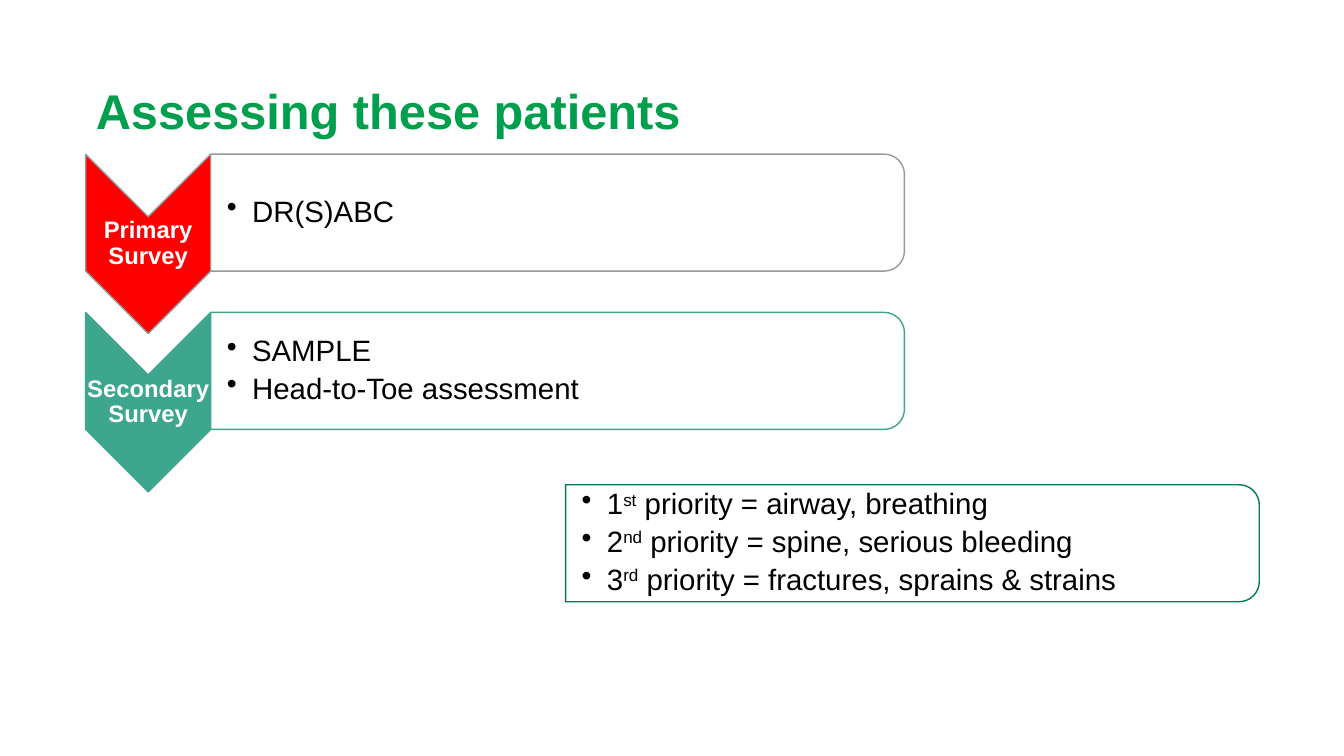
from dataclasses import dataclass
from math import cos, pi, sin

from lxml.etree import SubElement
from pptx import Presentation
from pptx.dml.color import RGBColor
from pptx.enum.text import MSO_ANCHOR as Anchor, MSO_AUTO_SIZE as AutoSize, PP_ALIGN as Align
from pptx.oxml.ns import qn
from pptx.shapes.autoshape import Shape
from pptx.slide import Slide
from pptx.text.text import TextFrame, _Paragraph as Paragraph
from pptx.util import Inches, Pt


@dataclass(frozen=True)
class Theme:
    font: str = "Arial"
    title_size: float = 34.8
    stage_size: float = 17
    item_size: float = 21
    title: str = "009F4D"
    ink: str = "000000"
    white: str = "FFFFFF"
    primary: str = "FF0000"
    primary_line: str = "97999B"
    secondary: str = "3EA68E"
    priority_line: str = "007A53"


@dataclass(frozen=True)
class Panel:
    left: float
    top: float
    line: str
    items: tuple[str, ...]


@dataclass(frozen=True)
class Stage:
    label: str
    fill: str
    line: str
    items: tuple[str, ...]


THEME = Theme()
STAGES = (
    Stage("Primary Survey", THEME.primary, THEME.primary_line, ("DR(S)ABC",)),
    Stage("Secondary Survey", THEME.secondary, THEME.secondary,
          ("SAMPLE", "Head-to-Toe assessment")),
)
# A caret pair encloses superscript text.
PRIORITIES = Panel(5.61, 4.81, THEME.priority_line, (
    "1^st^ priority = airway, breathing",
    "2^nd^ priority = spine, serious bleeding",
    "3^rd^ priority = fractures, sprains & strains",
))
STAGE_LEFT, STAGE_TOP, STAGE_PITCH = 0.85, 1.53, 1.57
CHEVRON_WIDTH, CHEVRON_HEIGHT = 1.24, 1.78
PANEL_WIDTH, PANEL_HEIGHT, CORNER = 6.88, 1.16, 0.2
ARC_STEPS = 8


def add_outline(slide: Slide, points: list[tuple[float, float]], fill: str, line: str) -> Shape:
    start, *rest = [(Inches(x), Inches(y)) for x, y in points]
    builder = slide.shapes.build_freeform(*start)
    builder.add_line_segments(rest, close=True)
    outline = builder.convert_to_shape()
    outline.shadow.inherit = False
    outline.fill.solid()
    outline.fill.fore_color.rgb = RGBColor.from_string(fill)
    outline.line.color.rgb = RGBColor.from_string(line)
    outline.line.width = Pt(1)
    return outline


def set_frame(frame: TextFrame, anchor: Anchor, left: float, top: float,
              right: float, bottom: float) -> None:
    frame.word_wrap = True
    frame.auto_size = AutoSize.NONE
    frame.vertical_anchor = anchor
    frame.margin_left, frame.margin_top = Inches(left), Inches(top)
    frame.margin_right, frame.margin_bottom = Inches(right), Inches(bottom)


def style(paragraph: Paragraph, size: float, color: str, bold: bool, align: Align) -> None:
    paragraph.alignment = align
    paragraph.line_spacing = 0.9
    paragraph.font.name = THEME.font
    paragraph.font.size = Pt(size)
    paragraph.font.bold = bold
    paragraph.font.color.rgb = RGBColor.from_string(color)


def add_bullet(paragraph: Paragraph) -> None:
    properties = paragraph._p.get_or_add_pPr()
    properties.set("marL", str(Inches(0.25)))
    properties.set("indent", str(-Inches(0.25)))
    SubElement(properties, qn("a:buChar")).set("char", "•")


def add_title(slide: Slide, text: str) -> None:
    title = slide.shapes.title
    title.left, title.top = Inches(0.85), Inches(0.82)
    title.width, title.height = Inches(8.3), Inches(1.36)
    set_frame(title.text_frame, Anchor.TOP, 0.1, 0.05, 0.1, 0.05)
    title.text_frame.text = text
    style(title.text_frame.paragraphs[0], THEME.title_size, THEME.title, True, Align.LEFT)


def add_chevron(slide: Slide, stage: Stage, top: float) -> None:
    point = CHEVRON_WIDTH / 2
    left, middle, right = STAGE_LEFT, STAGE_LEFT + point, STAGE_LEFT + CHEVRON_WIDTH
    bottom = top + CHEVRON_HEIGHT
    chevron = add_outline(slide, [
        (right, top), (right, bottom - point), (middle, bottom),
        (left, bottom - point), (left, top), (middle, top + point),
    ], stage.fill, stage.line)
    set_frame(chevron.text_frame, Anchor.MIDDLE, 0.01, 0.63, 0.01, 0.63)
    chevron.text_frame.text = stage.label
    style(chevron.text_frame.paragraphs[0], THEME.stage_size, THEME.white, True, Align.CENTER)


def add_panel(slide: Slide, panel: Panel) -> None:
    """Draw a bulleted box whose right-hand corners are rounded."""
    right, bottom = panel.left + PANEL_WIDTH, panel.top + PANEL_HEIGHT
    angles = [step * pi / 2 / ARC_STEPS for step in range(ARC_STEPS + 1)]
    arc = [(right - CORNER + CORNER * sin(a), CORNER - CORNER * cos(a)) for a in angles]
    upper = [(x, panel.top + inset) for x, inset in arc]
    lower = [(x, bottom - inset) for x, inset in reversed(arc)]
    corners = [(panel.left, panel.top), *upper, *lower, (panel.left, bottom)]
    box = add_outline(slide, corners, THEME.white, panel.line)
    frame = box.text_frame
    set_frame(frame, Anchor.MIDDLE, 0.16, 0.07, 0.07, 0.07)
    for index, item in enumerate(panel.items):
        paragraph = frame.add_paragraph() if index else frame.paragraphs[0]
        add_bullet(paragraph)
        style(paragraph, THEME.item_size, THEME.ink, False, Align.LEFT)
        paragraph.space_after = Pt(4.3)
        for part, text in enumerate(item.split("^")):
            run = paragraph.add_run()
            run.text = text
            if part % 2:
                run._r.get_or_add_rPr().set("baseline", "30000")


def main() -> None:
    deck = Presentation()
    deck.slide_width, deck.slide_height = Inches(13.33), Inches(7.5)
    slide = deck.slides.add_slide(deck.slide_layouts[5])
    add_title(slide, "Assessing these patients")
    for row, stage in enumerate(STAGES):
        top = STAGE_TOP + row * STAGE_PITCH
        add_chevron(slide, stage, top)
        add_panel(slide, Panel(STAGE_LEFT + CHEVRON_WIDTH, top, stage.line, stage.items))
    add_panel(slide, PRIORITIES)
    deck.save("out.pptx")


if __name__ == "__main__":
    main()
